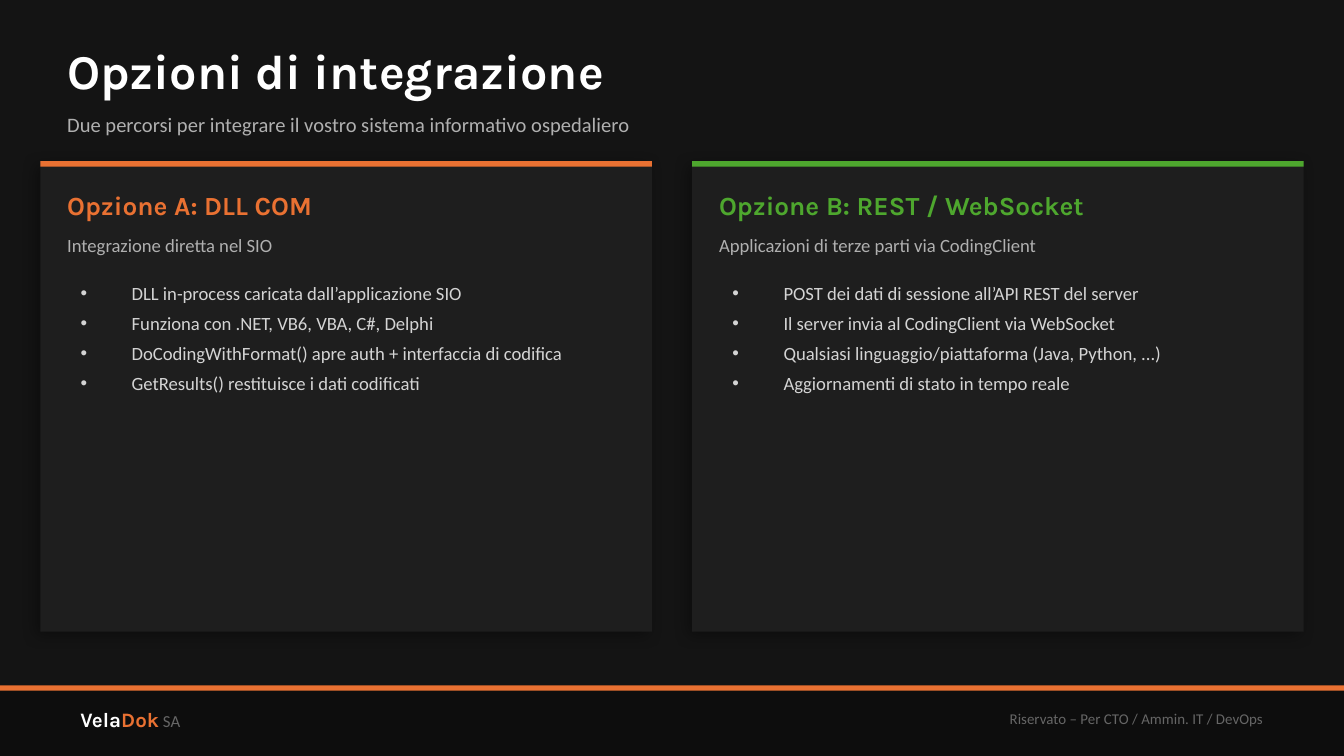
from lxml.etree import SubElement
from pptx import Presentation
from pptx.dml.color import RGBColor
from pptx.enum.shapes import MSO_SHAPE
from pptx.enum.text import MSO_ANCHOR, MSO_AUTO_SIZE, PP_ALIGN
from pptx.oxml.ns import qn
from pptx.util import Inches, Pt

CELL = Inches(0.05)
COLS, ROWS = 200, 112.5
ORANGE, GREEN = "E97132", "4EA72E"
WHITE, SOFT, PALE, DIM = "FFFFFF", "B0B0B0", "D4D4D4", "666666"
HEAD, BODY = "Karla", "Calibri"


def color(code):
    return RGBColor.from_string(code)


def place(shape, box):
    shape.left, shape.top, shape.width, shape.height = (int(n * CELL) for n in box)


def bar(slide, box, fill):
    shape = slide.shapes.add_shape(MSO_SHAPE.RECTANGLE, 0, 0, 0, 0)
    place(shape, box)
    shape.shadow.inherit = False
    shape.fill.solid()
    shape.fill.fore_color.rgb = color(fill)
    shape.line.fill.background()
    return shape


def shade(shape):
    effects = shape.element.spPr.find(qn("a:effectLst"))
    outer = SubElement(effects, qn("a:outerShdw"), blurRad=str(Pt(8)),
                       dist=str(Pt(3)), dir=str(135 * 60000),
                       algn="bl", rotWithShape="0")
    tint = SubElement(outer, qn("a:srgbClr"), val="000000")
    SubElement(tint, qn("a:alpha"), val="35000")


def style(run, size, fill, face=BODY, bold=False):
    font = run.font
    font.size, font.name, font.bold = Pt(size), face, bold
    font.color.rgb = color(fill)


def prep(slide, box, holder=None, inset=0, anchor=MSO_ANCHOR.MIDDLE):
    shape = holder or slide.shapes.add_textbox(0, 0, 0, 0)
    slide.shapes.element.append(shape.element)
    place(shape, box)
    frame = shape.text_frame
    frame.word_wrap = True
    frame.auto_size = MSO_AUTO_SIZE.NONE
    frame.vertical_anchor = anchor
    frame.margin_left = frame.margin_right = Inches(inset)
    frame.margin_top = frame.margin_bottom = Inches(inset / 2)
    return frame


def label(slide, box, text, look, holder=None, inset=0, align=PP_ALIGN.LEFT):
    frame = prep(slide, box, holder, inset)
    frame.text = text
    para = frame.paragraphs[0]
    para.alignment = align
    para.space_before = Pt(0)
    style(para.runs[0], *look)


def bullets(slide, box, items, holder):
    frame = prep(slide, box, holder, 0.1, MSO_ANCHOR.TOP)
    frame.text = "\n".join(items)
    for para in frame.paragraphs:
        props = para._p.get_or_add_pPr()
        props.set("marL", str(Inches(0.38)))
        props.set("indent", str(-Inches(0.38)))
        SubElement(props, qn("a:buFont"), typeface="Arial")
        SubElement(props, qn("a:buChar"), char="•")
        para.space_before, para.space_after = Pt(0), Pt(4)
        style(para.runs[0], 10, PALE)


def header(slide, box, title, note):
    x, y, w, h = box
    label(slide, (x, y, w, 11), title, (26, WHITE, HEAD, True), slide.shapes.title)
    label(slide, (x, y + 10, w, 7), note, (11, SOFT))


def panel(slide, box, fill, title, note, items, heads):
    x, y, w, h = box
    shade(bar(slide, box, "1E1E1E"))
    bar(slide, (x, y, w, 0.8), fill)
    left, wide = x + 4, w - 8
    label(slide, (left, y + 3, wide, 7), title, (14, fill, HEAD, True), heads[0])
    label(slide, (left, y + 10, wide, 5), note, (10, SOFT))
    bullets(slide, (left, y + 17, wide, h - 20), items, heads[1])


def footer(slide, box, name, note):
    x, y, w, h = box
    bar(slide, box, "0D0D0D")
    bar(slide, (x, y, w, 0.8), ORANGE)
    para = prep(slide, (x + 10, y + 1, 60, 8), inset=0.1).paragraphs[0]
    looks = [(11, WHITE, HEAD, True), (11, ORANGE, HEAD, True), (9, DIM)]
    for part, look in zip(name, looks):
        run = para.add_run()
        run.text = part
        style(run, *look)
    label(slide, (x + w - 90, y + 1, 80, 8), note, (8, DIM),
          inset=0.1, align=PP_ALIGN.RIGHT)


def main():
    deck = Presentation()
    deck.slide_width, deck.slide_height = int(COLS * CELL), int(ROWS * CELL)
    slide = deck.slides.add_slide(deck.slide_layouts[4])
    slide.background.fill.solid()
    slide.background.fill.fore_color.rgb = color("141414")
    holds = list(slide.placeholders)

    footer(slide, (0, 102, COLS, ROWS - 102), ("Vela", "Dok", " SA"),
           "Riservato – Per CTO / Ammin. IT / DevOps")
    header(slide, (10, 5, COLS - 20, 17), "Opzioni di integrazione",
           "Due percorsi per integrare il vostro sistema informativo ospedaliero")

    options = [
        (ORANGE, "Opzione A: DLL COM", "Integrazione diretta nel SIO",
         ["DLL in-process caricata dall’applicazione SIO",
          "Funziona con .NET, VB6, VBA, C#, Delphi",
          "DoCodingWithFormat() apre auth + interfaccia di codifica",
          "GetResults() restituisce i dati codificati"]),
        (GREEN, "Opzione B: REST / WebSocket",
         "Applicazioni di terze parti via CodingClient",
         ["POST dei dati di sessione all’API REST del server",
          "Il server invia al CodingClient via WebSocket",
          "Qualsiasi linguaggio/piattaforma (Java, Python, ...)",
          "Aggiornamenti di stato in tempo reale"]),
    ]
    edge, gap = 6, 6
    wide = (COLS - 2 * edge - gap) / 2
    for i, option in enumerate(options):
        box = (edge + i * (wide + gap), 24, wide, 70)
        panel(slide, box, *option, holds[1 + 2 * i:3 + 2 * i])

    deck.save("out.pptx")


if __name__ == "__main__":
    main()
